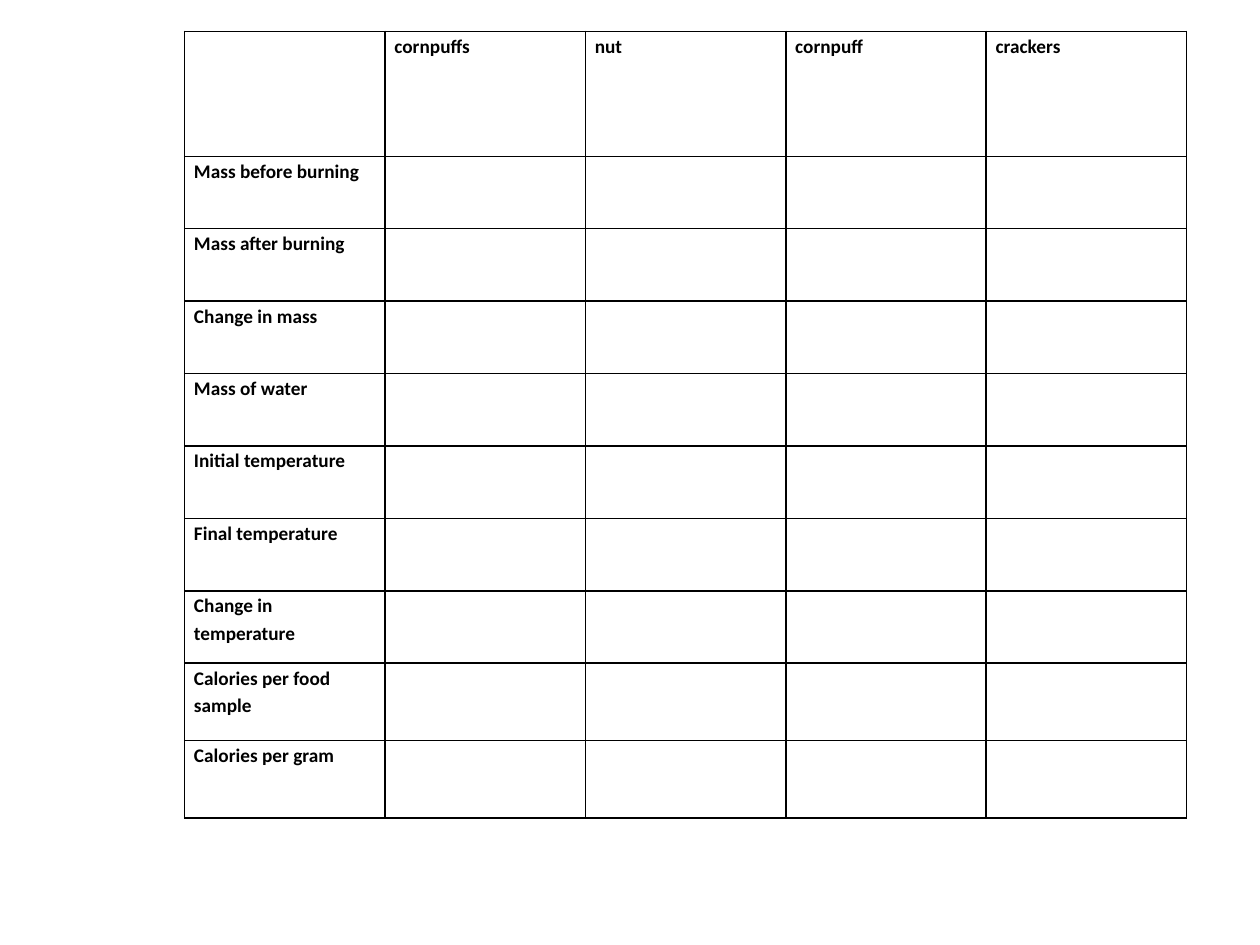
import pptx
import pptx.dml.color
import pptx.oxml.ns
import pptx.util
from lxml import etree

Cm = pptx.util.Cm
Pt = pptx.util.Pt

BLACK = pptx.dml.color.RGBColor(0x00, 0x00, 0x00)

FOODS = ["cornpuffs", "nut", "cornpuff", "crackers"]
MEASUREMENTS = [
    "Mass before burning",
    "Mass after burning",
    "Change in mass",
    "Mass of water",
    "Initial temperature",
    "Final temperature",
    "Change in temperature",
    "Calories per food sample",
    "Calories per gram",
]
ROWS = [["", *FOODS]] + [[name] + [""] * len(FOODS) for name in MEASUREMENTS]

LEFT, TOP = 3.72, 0.63
COLUMN_WIDTH = 4.04
ROW_HEIGHTS = [2.52] + [1.463] * 7 + [1.56] * 2
ROW_HEIGHTS = [round(height, 2) for height in ROW_HEIGHTS]
SIDE_MARGIN = 0.19


def add_borders(cell):
    properties = cell._tc.get_or_add_tcPr()
    qn = pptx.oxml.ns.qn
    for position, side in enumerate(("a:lnL", "a:lnR", "a:lnT", "a:lnB")):
        line = etree.Element(qn(side), w=str(Pt(1)))
        fill = etree.SubElement(line, qn("a:solidFill"))
        etree.SubElement(fill, qn("a:srgbClr"), val=str(BLACK))
        properties.insert(position, line)


def fill_cell(cell, text):
    cell.fill.background()
    cell.margin_left = cell.margin_right = Cm(SIDE_MARGIN)
    cell.margin_top = cell.margin_bottom = 0
    add_borders(cell)
    if text:
        para = cell.text_frame.paragraphs[0]
        para.line_spacing = 1.15
        span = para.add_run()
        span.text = text
        span.font.name = "Calibri"
        span.font.size = Pt(11)
        span.font.bold = True
        span.font.color.rgb = BLACK


def main():
    deck = pptx.Presentation()
    deck.slide_width, deck.slide_height = Cm(25.4), Cm(19.05)
    page = deck.slides.add_slide(deck.slide_layouts[6])

    column_count = len(ROWS[0])
    table = page.shapes.add_table(
        len(ROWS), column_count, Cm(LEFT), Cm(TOP),
        Cm(COLUMN_WIDTH * column_count), Cm(sum(ROW_HEIGHTS)),
    ).table
    table.first_row = table.horz_banding = False

    for column in table.columns:
        column.width = Cm(COLUMN_WIDTH)
    for row, height, texts in zip(table.rows, ROW_HEIGHTS, ROWS):
        row.height = Cm(height)
        for cell, text in zip(row.cells, texts):
            fill_cell(cell, text)

    deck.save("out.pptx")


if __name__ == "__main__":
    main()
